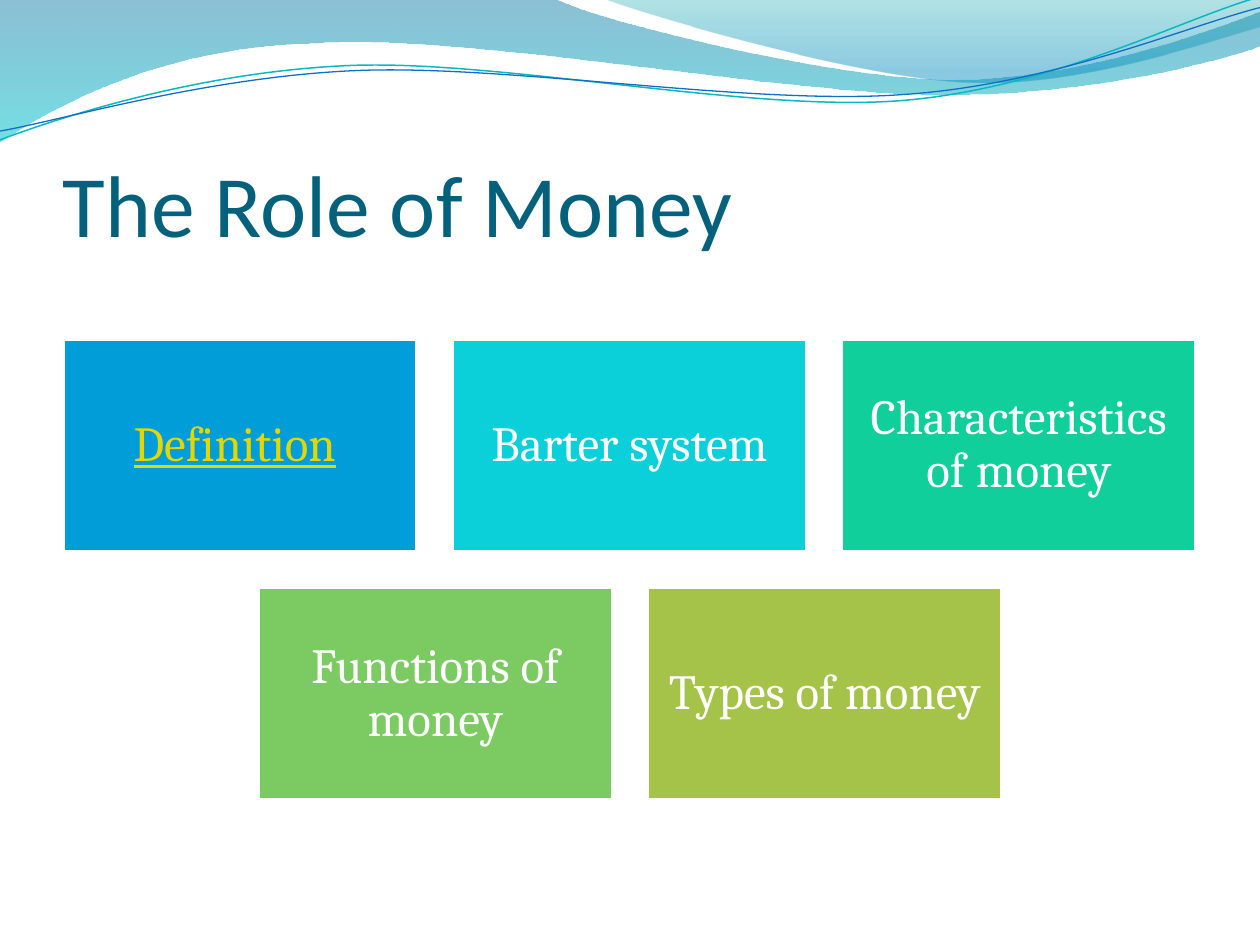
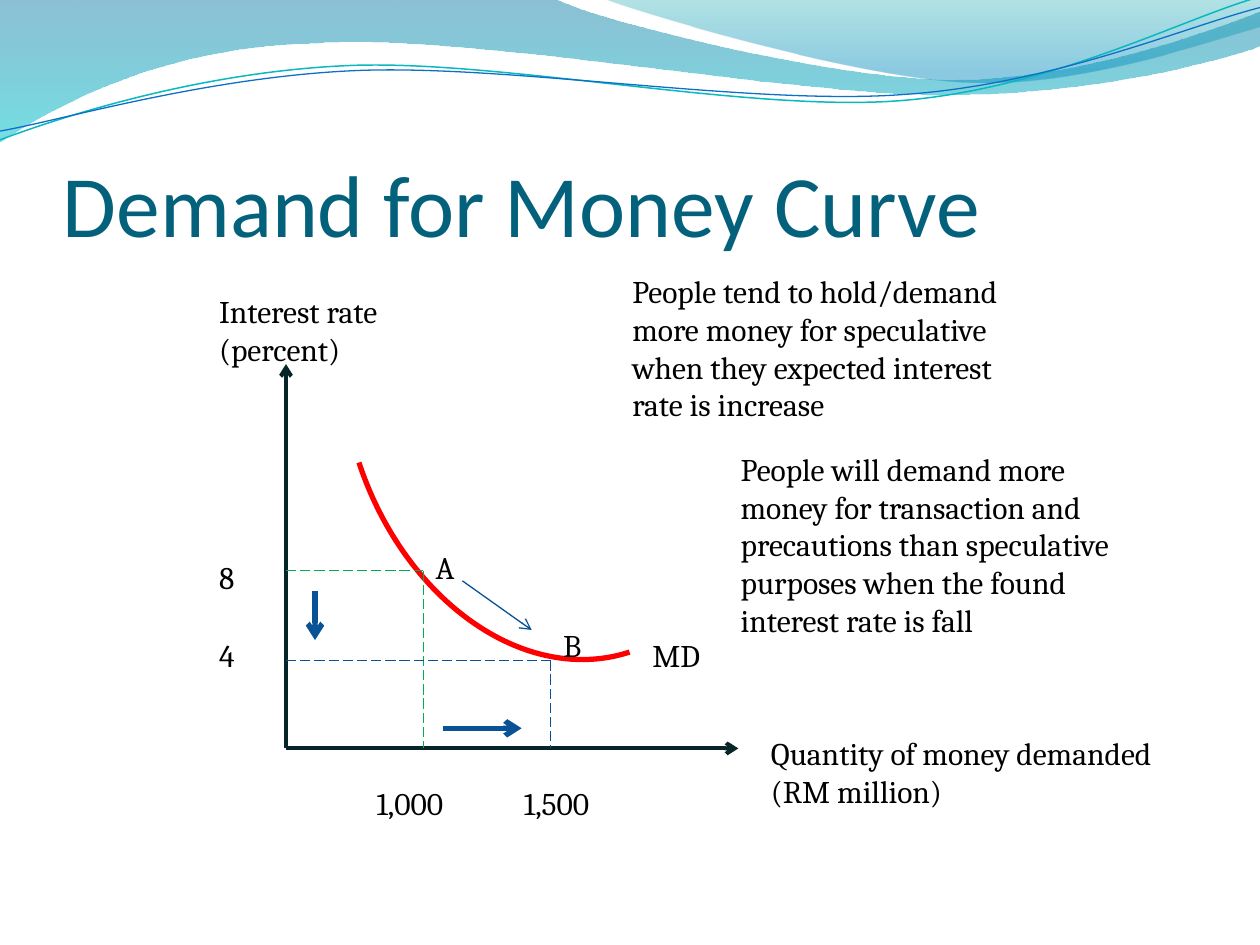
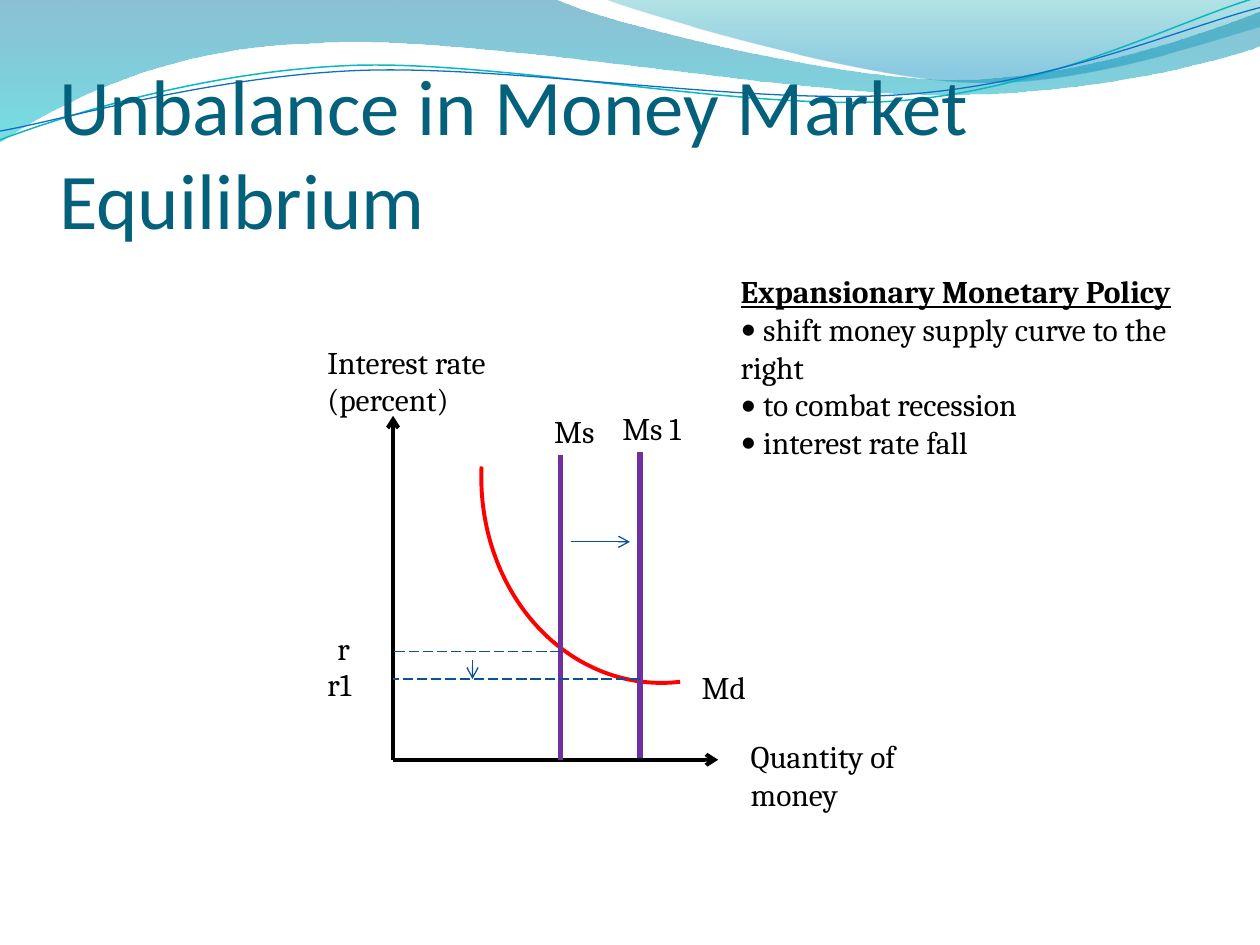
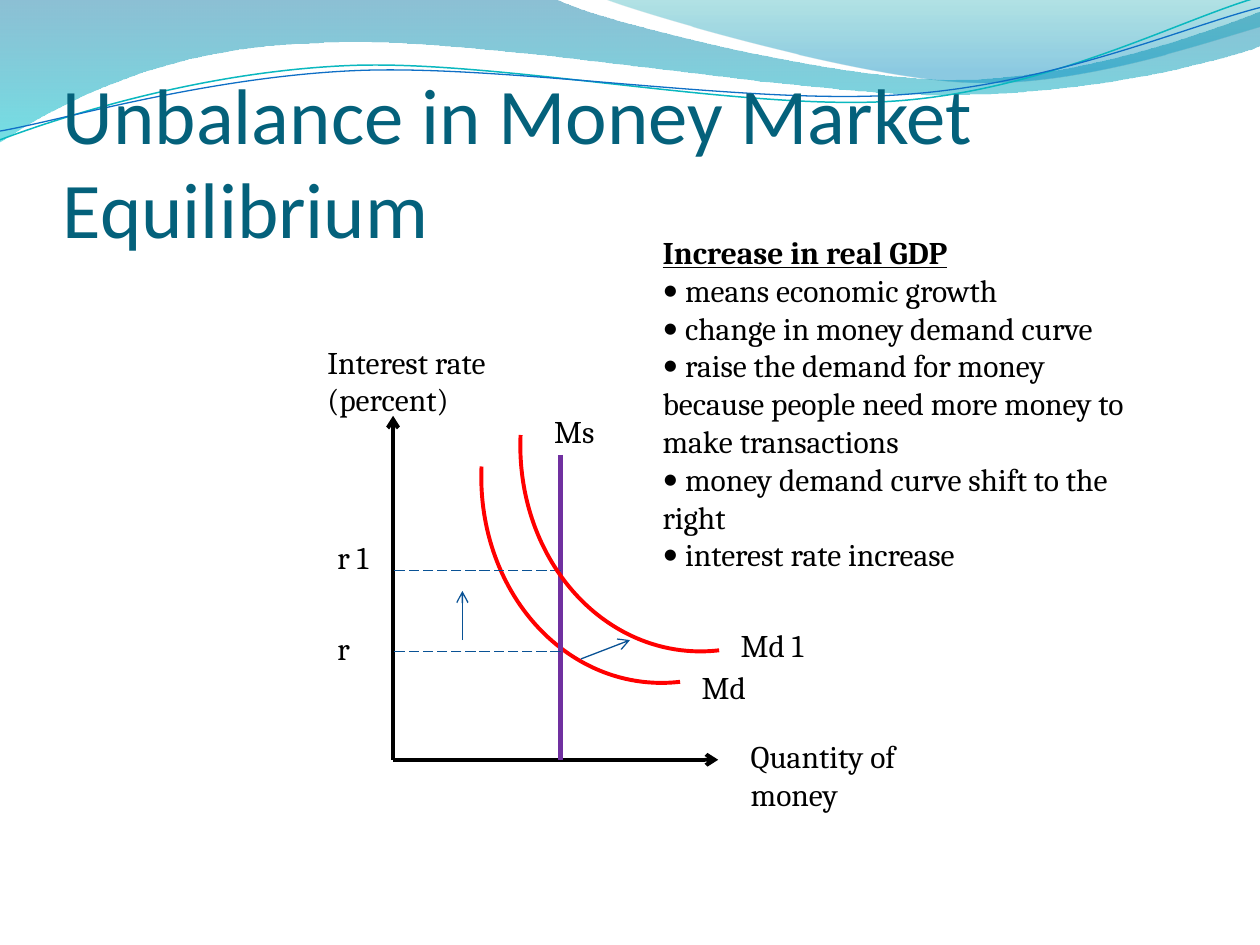
"""Build four slides on the role of money and the money market."""
from dataclasses import dataclass
from math import cos, radians, sin
from typing import Optional

from lxml.etree import SubElement
from pptx import Presentation
from pptx.dml.color import RGBColor
from pptx.enum.dml import MSO_LINE
from pptx.enum.shapes import MSO_CONNECTOR, MSO_SHAPE
from pptx.enum.text import MSO_ANCHOR, MSO_AUTO_SIZE, PP_ALIGN
from pptx.oxml.ns import qn
from pptx.util import Pt

PX = 9144
SLIDE_W, SLIDE_H = 1000, 750
RIPPLE_TILT = 357.3
HEAD_FONT, BODY_FONT = "Calibri", "Cambria"

WHITE = RGBColor(0xFF, 0xFF, 0xFF)
BLACK = RGBColor(0x00, 0x00, 0x00)
TITLE_TEAL = RGBColor(0x04, 0x61, 0x7B)
LINK_YELLOW = RGBColor(0xE2, 0xD7, 0x00)
RED = RGBColor(0xFF, 0x00, 0x00)
PURPLE = RGBColor(0x70, 0x30, 0xA0)
BLUE = RGBColor(0x09, 0x52, 0x95)
GREEN = RGBColor(0x00, 0xB0, 0x50)
DARK = RGBColor(0x07, 0x24, 0x28)
TILE_BLUE = RGBColor(0x00, 0x9D, 0xD9)
TILE_CYAN = RGBColor(0x0B, 0xD0, 0xD9)
TILE_MINT = RGBColor(0x10, 0xCF, 0x9B)
TILE_GREEN = RGBColor(0x7C, 0xCA, 0x62)
TILE_OLIVE = RGBColor(0xA5, 0xC2, 0x49)
WAVE_BLUE = RGBColor(0x00, 0x74, 0xA1)
WAVE_AQUA = RGBColor(0x00, 0xC6, 0xCF)
CREST_TEAL = RGBColor(0x00, 0xA1, 0xA9)
CREST_BLUE = RGBColor(0x00, 0x8B, 0xBF)
RIPPLE_AQUA = RGBColor(0x0A, 0xB8, 0xBF)
RIPPLE_BLUE = RGBColor(0x0F, 0x6F, 0xC6)

Point = tuple[float, float]


@dataclass(frozen=True)
class Stop:
    """A gradient stop with its position and opacity in percent."""
    position: int
    color: RGBColor
    opacity: int


@dataclass(frozen=True)
class Wave:
    """An outline whose segments hold one point for a line, three for a curve."""
    start: Point
    segments: tuple[tuple[Point, ...], ...]
    stops: tuple[Stop, ...] = ()
    color: Optional[RGBColor] = None
    width: float = 0
    center: Point = (0, 0)


@dataclass(frozen=True)
class Label:
    """A body text box; lines after the first may be bulleted."""
    text: str
    x: int
    y: int
    w: int
    h: int = 40
    wrap: bool = True
    bulleted: bool = False


@dataclass(frozen=True)
class Stroke:
    """A straight line, optionally dashed or ending in an arrow."""
    x1: int
    y1: int
    x2: int
    y2: int
    color: RGBColor = BLUE
    width: float = 0.75
    dash: bool = False
    arrow: bool = False


@dataclass(frozen=True)
class Arc:
    """A red money demand curve."""
    x: int
    y: int
    w: int
    h: int
    rotation: float
    width: float
    start: Optional[float] = None


@dataclass(frozen=True)
class Tile:
    """A coloured topic box."""
    text: str
    fill: RGBColor
    linked: bool = False


WAVES = (
    Wave((0, 0), (
        ((440, -1),),
        ((476, 17), (664, 63), (758, 63)),
        ((853, 63), (958, 26), (1000, 9)),
        ((1001, 36),),
        ((983, 44), (870, 76), (746, 75)),
        ((622, 75), (382, 28), (257, 34)),
        ((129, 36), (46, 83), (-1, 113)),
        ((0, 0),),
    ), stops=(Stop(0, WAVE_BLUE, 45), Stop(100, WAVE_AQUA, 55))),
    Wave((479, -1), (
        ((509, 11), (682, 62), (769, 65)),
        ((856, 69), (961, 32), (1000, 21)),
        ((1000, 0),),
        ((479, -1),),
    ), stops=(Stop(0, CREST_TEAL, 30), Stop(80, CREST_BLUE, 45))),
    Wave((0, 111), (
        ((48, 93), (158, 57), (277, 52)),
        ((395, 47), (593, 89), (713, 80)),
        ((833, 71), (938, 15), (998, -2)),
    ), color=RIPPLE_AQUA, width=0.85, center=(499, 57.5)),
    Wave((0, 104), (
        ((47, 96), (164, 61), (283, 56)),
        ((403, 51), (597, 84), (717, 75)),
        ((836, 67), (941, 21), (1000, 6)),
    ), color=RIPPLE_BLUE, width=0.75, center=(499.5, 59)),
)

TILE_W, TILE_H, TILE_GAP, TILE_TOP = 281, 169, 28, 269
TILE_ROWS = (
    (Tile("Definition", TILE_BLUE, linked=True),
     Tile("Barter system", TILE_CYAN),
     Tile("Characteristics of money", TILE_MINT)),
    (Tile("Functions of money", TILE_GREEN),
     Tile("Types of money", TILE_OLIVE)),
)

DEMAND_ITEMS = (
    Stroke(227, 594, 227, 289, DARK, 2.25, arrow=True),
    Stroke(227, 594, 586, 594, DARK, 2.25, arrow=True),
    Label("Quantity of money demanded\n(RM million)", 602, 578, 348, 71, wrap=False),
    Label("Interest rate (percent)", 164, 227, 164, 71),
    Arc(277, 108, 314, 420, 161.8, 3),
    Stroke(227, 453, 336, 453, GREEN, dash=True),
    Stroke(336, 453, 336, 594, GREEN, dash=True),
    Stroke(227, 524, 437, 524, dash=True),
    Stroke(437, 524, 437, 594, dash=True),
    Stroke(367, 461, 422, 500, arrow=True),
    Label("A", 336, 430, 39),
    Label("B", 437, 492, 39),
    Label("8", 164, 438, 63),
    Label("4", 164, 500, 55),
    Label("1,000", 289, 617, 86),
    Label("1,500", 406, 617, 94),
    Label("MD", 508, 500, 86),
    Stroke(250, 469, 250, 508, width=3, arrow=True),
    Stroke(352, 578, 414, 578, width=3, arrow=True),
    Label("People tend to hold/demand more money for speculative when they "
          "expected interest rate is increase", 492, 211, 344, 131),
    Label("People will demand more money for transaction and precautions than "
          "speculative purposes when the found interest rate is fall",
          578, 352, 336, 162),
)

MARKET_ITEMS = (
    Arc(382, 211, 289, 331, 182.5, 2.25, 157.74),
    Label("Interest rate (percent)", 250, 267, 164, 71),
    Stroke(312, 603, 312, 330, BLACK, 2.25, arrow=True),
    Stroke(312, 603, 570, 603, BLACK, 2.25, arrow=True),
    Stroke(445, 361, 445, 603, PURPLE, 3),
    Stroke(445, 517, 312, 517, dash=True),
    Label("Quantity of money", 586, 580, 156, 71),
    Label("Ms", 430, 322, 70),
    Label("Md", 547, 525, 70),
    Label("r", 258, 494, 63),
)

SUPPLY_SHIFT_ITEMS = (
    Stroke(508, 359, 508, 602, PURPLE, 3),
    Label("Ms 1", 484, 320, 109),
    Stroke(453, 430, 500, 430, arrow=True),
    Stroke(508, 539, 312, 539, dash=True),
    Stroke(375, 524, 375, 539, arrow=True),
    Label("r1", 250, 523, 47),
    Label("Expansionary Monetary Policy\n shift money supply curve to the right\n"
          " to combat recession\n interest rate fall", 578, 211, 398, 162, bulleted=True),
)

DEMAND_SHIFT_ITEMS = (
    Stroke(461, 523, 500, 508, arrow=True),
    Stroke(445, 453, 312, 453, dash=True),
    Stroke(367, 508, 367, 469, arrow=True),
    Label("r 1", 258, 422, 86),
    Arc(413, 186, 289, 331, 182.5, 2.25, 157.74),
    Label("Md 1", 578, 492, 94),
    Label("Increase in real GDP\n means economic growth\n change in money demand curve\n"
          " raise the demand for money because people need more money to make transactions\n"
          " money demand curve shift to the right\n interest rate increase",
          516, 180, 391, 283, bulleted=True),
)


def box(x: int, y: int, w: int, h: int) -> tuple[int, int, int, int]:
    """Turn a frame in px into EMU."""
    return x * PX, y * PX, w * PX, h * PX


def format_run(r, font: str, size: float, color: RGBColor) -> None:
    """Give a run its font, size and colour."""
    r.font.name = font
    r.font.size = Pt(size)
    r.font.color.rgb = color


def untilt(point: Point, center: Point) -> Point:
    """Turn a point back by the ripple tilt, about the centre of its frame."""
    angle = radians(-RIPPLE_TILT)
    dx, dy = point[0] - center[0], point[1] - center[1]
    return (center[0] + dx * cos(angle) - dy * sin(angle),
            center[1] + dx * sin(angle) + dy * cos(angle))


def bend(sp, wave: Wave) -> None:
    """Join the three line ends of each curved segment into one curve."""
    outline = next(sp._element.iter(qn("a:path")))
    lines = iter(outline.findall(qn("a:lnTo")))
    for segment in wave.segments:
        steps = [next(lines) for _ in segment]
        if len(steps) == 3:
            curve = outline.makeelement(qn("a:cubicBezTo"))
            steps[0].addprevious(curve)
            for step in steps:
                curve.append(step[0])
                outline.remove(step)


def draw_wave(s, wave: Wave):
    """Draw one outline of the top band."""
    points = [wave.start] + [point for segment in wave.segments for point in segment]
    if not wave.stops:
        points = [untilt(point, wave.center) for point in points]
    emu = [(round(x * PX), round(y * PX)) for x, y in points]
    builder = s.shapes.build_freeform(*emu[0], scale=1.0)
    builder.add_line_segments(emu[1:], close=bool(wave.stops))
    sp = builder.convert_to_shape()
    bend(sp, wave)
    sp.shadow.inherit = False
    if not wave.stops:
        sp.rotation = RIPPLE_TILT
        sp.fill.background()
        sp.line.color.rgb = wave.color
        sp.line.width = Pt(wave.width)
        return sp
    sp.line.fill.background()
    sp.fill.gradient()
    sp.fill.gradient_angle = 270
    for target, stop in zip(sp.fill.gradient_stops, wave.stops):
        target.position = stop.position / 100
        target.color.rgb = stop.color
    for clr, stop in zip(sp._element.spPr.iter(qn("a:srgbClr")), wave.stops):
        SubElement(clr, qn("a:alpha"), val=str(stop.opacity * 1000))
    return sp


def draw_band(s) -> None:
    """Draw the waves and move them to the layout that all slides share."""
    for wave in WAVES:
        sp = draw_wave(s, wave)
        s.slide_layout.shapes._spTree.append(sp._element)


def draw_title(s, text: str, size: int, x: int = 50, y: int = 77) -> None:
    """Draw the slide title, standing on the bottom of its box."""
    tf = s.shapes.add_textbox(*box(x, y, 900, 125)).text_frame
    tf.word_wrap = True
    tf.vertical_anchor = MSO_ANCHOR.BOTTOM
    tf.margin_left = tf.margin_right = tf.margin_bottom = 0
    tf.margin_top = 5 * PX
    tf.text = text
    format_run(tf.paragraphs[0].runs[0], HEAD_FONT, size, TITLE_TEAL)


def draw_label(s, label: Label) -> None:
    """Draw a body text box."""
    tf = s.shapes.add_textbox(*box(label.x, label.y, label.w, label.h)).text_frame
    tf.word_wrap = label.wrap
    tf.auto_size = MSO_AUTO_SIZE.SHAPE_TO_FIT_TEXT
    tf.text = label.text
    for i, p in enumerate(tf.paragraphs):
        r = p.runs[0]
        format_run(r, BODY_FONT, 18, BLACK)
        if label.bulleted and i == 0:
            r.font.bold = r.font.underline = True
        elif label.bulleted:
            pPr = p._p.get_or_add_pPr()
            SubElement(pPr, qn("a:buFont"), typeface=HEAD_FONT)
            SubElement(pPr, qn("a:buChar"), char="•")


def draw_stroke(s, stroke: Stroke) -> None:
    """Draw a straight line or arrow."""
    ends = (v * PX for v in (stroke.x1, stroke.y1, stroke.x2, stroke.y2))
    sp = s.shapes.add_connector(MSO_CONNECTOR.STRAIGHT, *ends)
    sp.line.color.rgb = stroke.color
    sp.line.width = Pt(stroke.width)
    if stroke.dash:
        sp.line.dash_style = MSO_LINE.LONG_DASH
    if stroke.arrow:
        SubElement(sp.line._get_or_add_ln(), qn("a:tailEnd"), type="arrow")
    SubElement(sp._element.spPr, qn("a:effectLst"))


def draw_arc(s, arc: Arc) -> None:
    """Draw a demand curve."""
    sp = s.shapes.add_shape(MSO_SHAPE.ARC, *box(arc.x, arc.y, arc.w, arc.h))
    sp.shadow.inherit = False
    sp.rotation = arc.rotation
    if arc.start is not None:
        sp.adjustments[0] = arc.start
    sp.fill.background()
    sp.line.color.rgb = RED
    sp.line.width = Pt(arc.width)


def draw_tile(s, tile: Tile, x: int, y: int) -> None:
    """Draw a topic box with its centred text."""
    sp = s.shapes.add_shape(MSO_SHAPE.RECTANGLE, *box(x, y, TILE_W, TILE_H))
    sp.shadow.inherit = False
    sp.fill.solid()
    sp.fill.fore_color.rgb = tile.fill
    sp.line.color.rgb = WHITE
    sp.line.width = Pt(2)
    tf = sp.text_frame
    tf.word_wrap = True
    tf.vertical_anchor = MSO_ANCHOR.MIDDLE
    tf.margin_left = tf.margin_right = tf.margin_top = tf.margin_bottom = 12 * PX
    tf.text = tile.text
    p = tf.paragraphs[0]
    p.alignment = PP_ALIGN.CENTER
    p.line_spacing = 0.9
    r = p.runs[0]
    format_run(r, BODY_FONT, 28, LINK_YELLOW if tile.linked else WHITE)
    if tile.linked:
        r.font.underline = True
        r = p.add_run()
        r.text = " "
        format_run(r, BODY_FONT, 28, WHITE)


def draw_tiles(s) -> None:
    """Draw the topic boxes in centred rows."""
    for row, tiles in enumerate(TILE_ROWS):
        row_w = len(tiles) * (TILE_W + TILE_GAP) - TILE_GAP
        for col, tile in enumerate(tiles):
            draw_tile(s, tile, (SLIDE_W - row_w) // 2 + col * (TILE_W + TILE_GAP),
                      TILE_TOP + row * (TILE_H + TILE_GAP))


def draw_items(s, items: tuple) -> None:
    """Draw the parts of a graph from back to front."""
    draw = {Label: draw_label, Stroke: draw_stroke, Arc: draw_arc}
    for item in items:
        draw[type(item)](s, item)


def main() -> None:
    """Build and save the presentation."""
    prs = Presentation()
    prs.slide_width, prs.slide_height = SLIDE_W * PX, SLIDE_H * PX
    blank = prs.slide_layouts[6]

    s = prs.slides.add_slide(blank)
    draw_band(s)
    draw_title(s, "The Role of Money", 50)
    draw_tiles(s)

    s = prs.slides.add_slide(blank)
    draw_title(s, "Demand for Money Curve", 50)
    draw_items(s, DEMAND_ITEMS)

    s = prs.slides.add_slide(blank)
    draw_title(s, "Unbalance in Money Market Equilibrium", 45, 47, 70)
    draw_items(s, MARKET_ITEMS + SUPPLY_SHIFT_ITEMS)

    s = prs.slides.add_slide(blank)
    draw_title(s, "Unbalance in Money Market Equilibrium", 45)
    draw_items(s, MARKET_ITEMS + DEMAND_SHIFT_ITEMS)

    prs.save("out.pptx")


if __name__ == "__main__":
    main()
